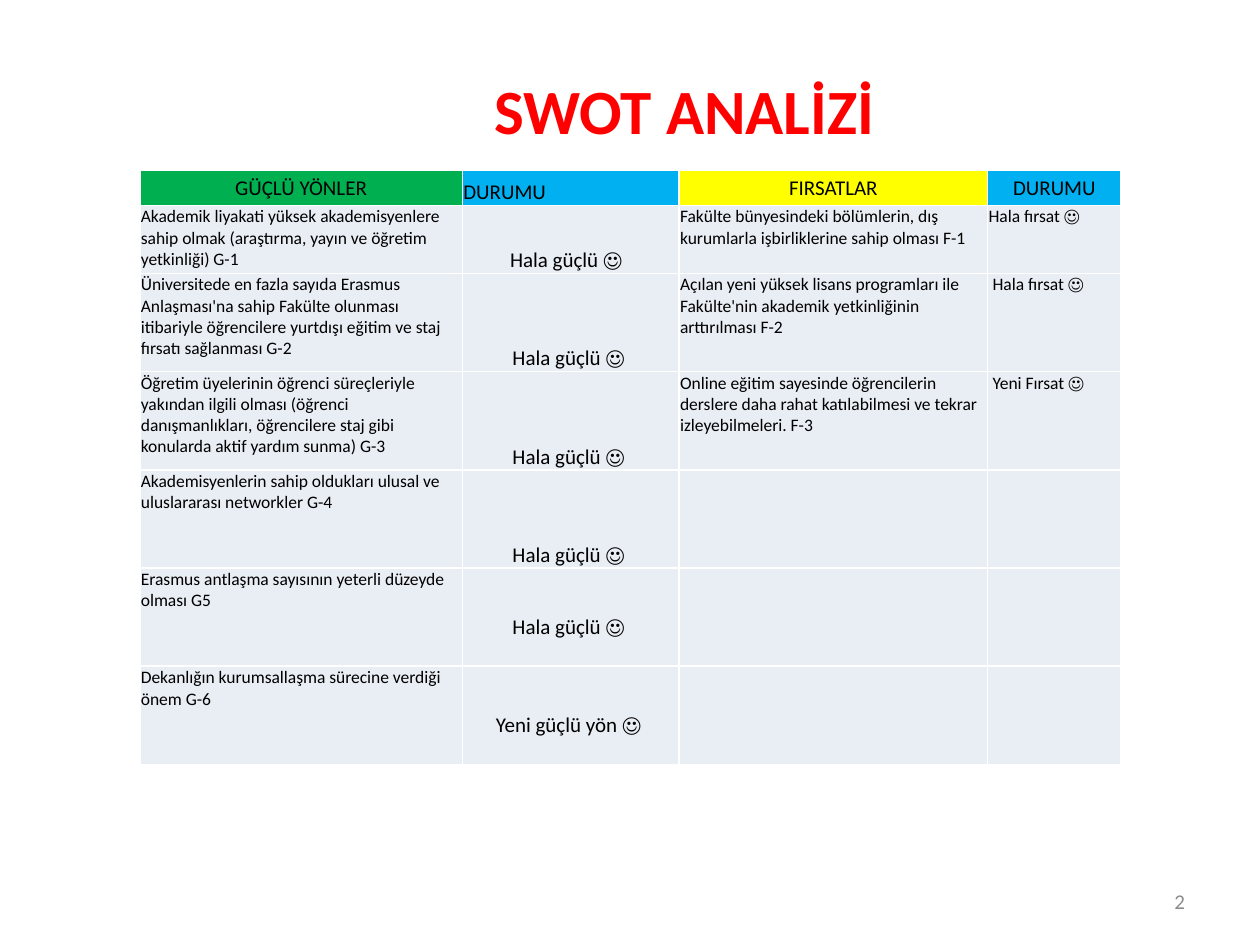
from lxml import etree
from pptx import Presentation
from pptx import util as u
from pptx.dml.color import RGBColor
from pptx.enum import text
from pptx.oxml import ns

LEFT, MID, RIGHT = text.PP_ALIGN.LEFT, text.PP_ALIGN.CENTER, text.PP_ALIGN.RIGHT
TOP, CORE, BASE = text.MSO_ANCHOR.TOP, text.MSO_ANCHOR.MIDDLE, text.MSO_ANCHOR.BOTTOM

WIDTHS = [6.5, 4.37, 6.22, 2.69]
HEIGHTS = [0.71, 1.37] + [1.98] * 5
HEADS = [
    ("GÜÇLÜ YÖNLER", "00B050", MID, CORE),
    ("DURUMU", "00B0F0", LEFT, BASE),
    ("FIRSATLAR", "FFFF00", MID, CORE),
    ("DURUMU", "00B0F0", MID, CORE),
]
ROWS = [
    ("Akademik liyakati yüksek akademisyenlere sahip olmak (araştırma, yayın ve öğretim yetkinliği) G-1",
     "Hala güçlü ☺",
     "Fakülte bünyesindeki bölümlerin, dış kurumlarla işbirliklerine sahip olması F-1",
     "Hala fırsat ☺"),
    ("Üniversitede en fazla sayıda Erasmus Anlaşması'na sahip Fakülte olunması itibariyle "
     "öğrencilere yurtdışı eğitim ve staj fırsatı sağlanması G-2",
     "Hala güçlü ☺",
     "Açılan yeni yüksek lisans programları ile Fakülte'nin akademik yetkinliğinin arttırılması F-2",
     "Hala fırsat ☺"),
    ("Öğretim üyelerinin öğrenci süreçleriyle yakından ilgili olması (öğrenci danışmanlıkları, "
     "öğrencilere staj gibi konularda aktif yardım sunma) G-3",
     "Hala güçlü ☺",
     "Online eğitim sayesinde öğrencilerin derslere daha rahat katılabilmesi ve tekrar izleyebilmeleri. F-3",
     "Yeni Fırsat ☺"),
    ("Akademisyenlerin sahip oldukları ulusal ve uluslararası networkler G-4", "Hala güçlü ☺", "", ""),
    ("Erasmus antlaşma sayısının yeterli düzeyde olması G5", "Hala güçlü ☺", "", ""),
    ("Dekanlığın kurumsallaşma sürecine verdiği önem G-6", "Yeni güçlü yön ☺", "", ""),
]


def color(code):
    return RGBColor.from_string(code)


def write(frame, words, size=10, tint="000000", bold=False, align=LEFT, face="Calibri"):
    para = frame.paragraphs[0]
    para.alignment = align
    para.font.size = u.Pt(size)
    if words:
        run = para.add_run()
        run.text = words
        run.font.name = face
        run.font.size = u.Pt(size)
        run.font.bold = bold
        run.font.color.rgb = color(tint)


class Deck:
    pale, rule = "E9EDF4", "FFFFFF"

    def __init__(self, slide):
        self.slide = slide

    def label(self, words, x, y, w, h, anchor=TOP, **style):
        box = self.slide.shapes.add_textbox(u.Cm(x), u.Cm(y), u.Cm(w), u.Cm(h))
        box.text_frame.word_wrap = True
        box.text_frame.vertical_anchor = anchor
        write(box.text_frame, words, **style)

    def grid(self, x, y, widths, heights):
        frame = self.slide.shapes.add_table(
            len(heights), len(widths), u.Cm(x), u.Cm(y),
            u.Cm(sum(widths)), u.Cm(sum(heights)))
        for col, width in zip(frame.table.columns, widths):
            col.width = u.Cm(width)
        for row, height in zip(frame.table.rows, heights):
            row.height = u.Cm(height)
        return frame.table

    def cell(self, cell, words, fill=pale, anchor=TOP, left=0.02, right=0.02, base=0, **style):
        props = cell._tc.get_or_add_tcPr()
        for side in ("lnL", "lnR", "lnT", "lnB"):
            line = etree.SubElement(props, ns.qn("a:" + side), w=str(u.Pt(1)))
            paint = etree.SubElement(line, ns.qn("a:solidFill"))
            etree.SubElement(paint, ns.qn("a:srgbClr"), val=self.rule)
        cell.fill.solid()
        cell.fill.fore_color.rgb = color(fill)
        cell.margin_left, cell.margin_right = u.Cm(left), u.Cm(right)
        cell.margin_top, cell.margin_bottom = u.Cm(0.02), u.Cm(base)
        cell.vertical_anchor = anchor
        write(cell.text_frame, words, **style)


def main():
    show = Presentation()
    show.slide_width, show.slide_height = u.Cm(25.4), u.Cm(19.05)
    deck = Deck(show.slides.add_slide(show.slide_layouts[6]))
    deck.label("SWOT ANALİZİ", 4.09, 1.32, 19.41, 1.8,
               size=36, tint="FF0000", bold=True, align=MID)
    deck.label("2", 18.21, 17.65, 5.93, 1.02, anchor=CORE,
               size=12, tint="8C8C8C", align=RIGHT)
    table = deck.grid(2.82, 3.43, WIDTHS, HEIGHTS)
    for c, (words, fill, align, anchor) in enumerate(HEADS):
        deck.cell(table.cell(0, c), words, fill, anchor, size=12, align=align)
    for r, (strong, state, chance, news) in enumerate(ROWS, 1):
        deck.cell(table.cell(r, 0), strong)
        deck.cell(table.cell(r, 1), state, anchor=BASE, size=12, align=MID,
                  right=0.2 if r == 1 else 0.1, base=0.52 if r > 4 else 0)
        deck.cell(table.cell(r, 2), chance)
        deck.cell(table.cell(r, 3), news, left=0.1 if r > 1 else 0.02)
    show.save("out.pptx")


if __name__ == "__main__":
    main()
